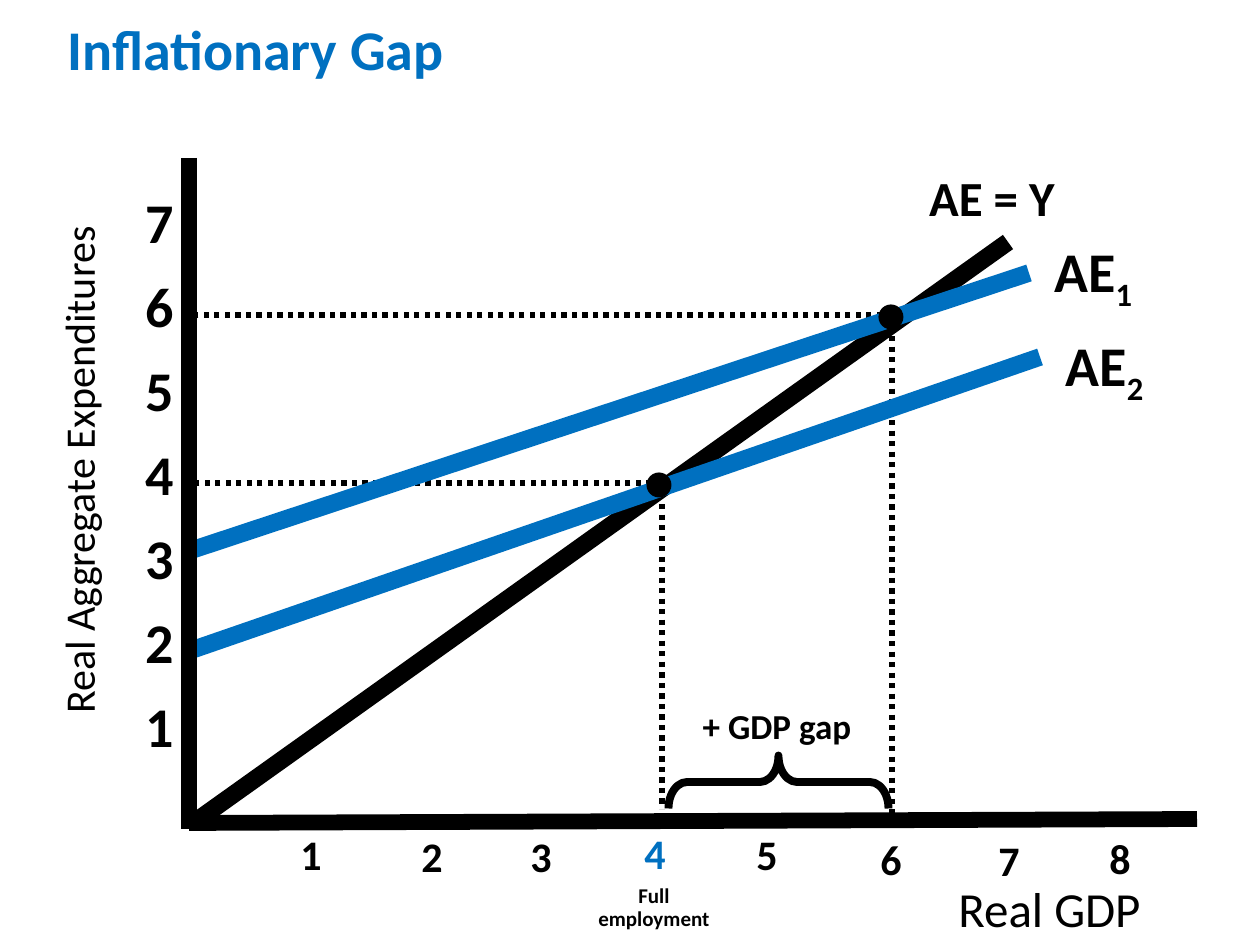
from lxml.etree import SubElement
from pptx import Presentation
from pptx.dml.color import RGBColor
from pptx.enum.dml import MSO_LINE
from pptx.enum.shapes import MSO_CONNECTOR, MSO_SHAPE
from pptx.enum.text import PP_ALIGN
from pptx.oxml.ns import qn
from pptx.util import Emu, Pt

PX = 914400 / 126
COLORS = {"black": "000000", "blue": "0070C0"}
FONT = "Calibri"

# Axis numbers: one even step upward, and (text, centre x, top, colour) along the bottom
EXPENDITURES = ["7", "6", "5", "4", "3", "2", "1"]
EXPENDITURE_TOP, EXPENDITURE_STEP = 189, 84
GDP_TICKS = [
    ("1", 311, 828, "black"), ("2", 432, 830, "black"),
    ("3", 541, 830, "black"), ("4", 655, 827, "blue"),
    ("5", 767, 828, "black"), ("6", 891, 833, "black"),
    ("7", 1009, 834, "black"), ("8", 1120, 832, "black"),
]

# Captions: text, (left, top, width, height), format
CAPTIONS = [
    ("Inflationary Gap", (55, 16, 651, 74),
     dict(size=32, bold=True, color="blue", align=PP_ALIGN.LEFT)),
    ("Real GDP", (892, 879, 315, 66), dict(size=28)),
    ("Real Aggregate Expenditures", (-252, 441, 667, 58), dict(size=24, rotation=270)),
    ("AE = Y ", (903, 168, 189, 66), dict(size=28, bold=True)),
    ("AE", (1029, 231, 136, 74), dict(size=32, bold=True, subscript="1 ")),
    ("AE", (1040, 325, 136, 74), dict(size=32, bold=True, subscript="2 ")),
    ("+ GDP gap", (672, 703, 210, 50), dict(size=20, bold=True)),
    ("Full employment", (573, 879, 162, 58), dict(size=12, bold=True)),
]

# Lines: start x, start y, end x, end y
GUIDES = [
    (882, 315, 189, 315), (892, 315, 892, 829),
    (662, 483, 189, 483), (662, 504, 662, 809),
]
EQUALITY = (199, 819, 1008, 242)
AE1 = (189, 551, 1029, 273)
AE2 = (189, 651, 1040, 357)
AXES = [(189, 823, 1197, 819), (189, 158, 189, 829)]

EQUILIBRIA = [(891, 317), (659, 485)]
DOT = 25
GAP_BRACE = (752, 672, 53, 220)


def px(*lengths):
    return [Emu(round(length * PX)) for length in lengths]


def rgb(color):
    return RGBColor.from_string(COLORS[color])


def add_text(text, box, *, size, bold=False, color="black",
             align=PP_ALIGN.CENTER, rotation=0, subscript=""):
    label = slide.shapes.add_textbox(*px(*box))
    label.rotation = rotation
    label.text_frame.word_wrap = True
    paragraph = label.text_frame.paragraphs[0]
    paragraph.alignment = align
    paragraph.line_spacing = 0.9
    for part in filter(None, (text, subscript)):
        run = paragraph.add_run()
        run.text = part
        font = run.font
        font.name, font.size, font.bold = FONT, Pt(size), bold
        font.color.rgb = rgb(color)
    if subscript:
        font._element.set("baseline", "-25000")


def add_line(ends, width, color="black", dash=None):
    line = slide.shapes.add_connector(MSO_CONNECTOR.STRAIGHT, *px(*ends))
    line.line.color.rgb = rgb(color)
    line.line.width = Pt(width)
    if dash:
        line.line.dash_style = dash
    SubElement(line._element.spPr, qn("a:effectLst"))


def add_dot(x, y):
    dot = slide.shapes.add_shape(MSO_SHAPE.OVAL, *px(x - DOT / 2, y - DOT / 2, DOT, DOT))
    dot.shadow.inherit = False
    dot.fill.solid()
    dot.fill.fore_color.rgb = rgb("black")
    dot.line.fill.background()


presentation = Presentation()
presentation.slide_width, presentation.slide_height = px(1260, 945)
slide = presentation.slides.add_slide(presentation.slide_layouts[6])

# Axis numbers and captions
for row, number in enumerate(EXPENDITURES):
    top = EXPENDITURE_TOP + row * EXPENDITURE_STEP
    add_text(number, (94, top, 92, 74), size=32, bold=True, align=PP_ALIGN.RIGHT)
for number, center, top, color in GDP_TICKS:
    add_text(number, (center - 50, top, 100, 59), size=24, bold=True, color=color)
for text, box, style in CAPTIONS:
    add_text(text, box, **style)

# Dotted guides, then the spending lines with their equilibrium points
for guide in GUIDES:
    add_line(guide, 3, dash=MSO_LINE.ROUND_DOT)
add_line(EQUALITY, 10)
for spending, equilibrium in zip((AE1, AE2), EQUILIBRIA):
    add_line(spending, 10, "blue")
    add_dot(*equilibrium)

# Brace over the GDP gap
brace = slide.shapes.add_shape(MSO_SHAPE.RIGHT_BRACE, *px(*GAP_BRACE))
brace.rotation = 270
brace.adjustments[0], brace.adjustments[1] = 0.35, 0.5
brace.shadow.inherit = False
brace.fill.background()
brace.line.color.rgb = rgb("black")
brace.line.width = Pt(4.5)

# Axes on top
for axis in AXES:
    add_line(axis, 9)

presentation.save("out.pptx")
